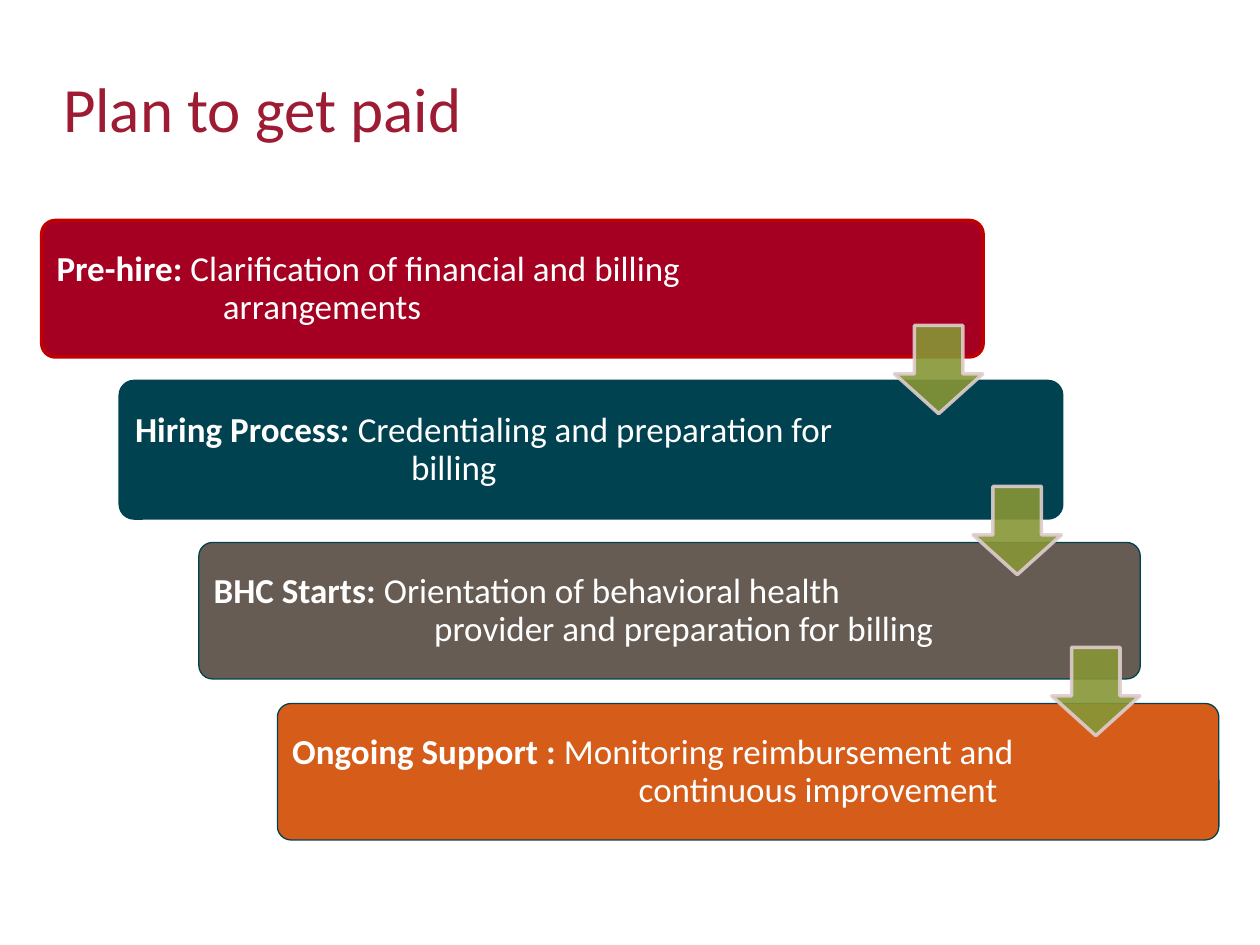
from dataclasses import dataclass

from lxml import etree
from pptx import Presentation
from pptx.dml.color import RGBColor
from pptx.enum.shapes import MSO_SHAPE
from pptx.enum.text import MSO_ANCHOR, PP_ALIGN
from pptx.oxml.ns import qn
from pptx.util import Pt

ROUND = MSO_SHAPE.ROUNDED_RECTANGLE
DOWN = MSO_SHAPE.DOWN_ARROW
MIDDLE = MSO_ANCHOR.MIDDLE
LEFT = PP_ALIGN.LEFT


@dataclass(frozen=True)
class Theme:
    """Fonts, type sizes and colours of the slide."""
    font: str = "Calibri"
    head: int = 36
    body: int = 20
    title: str = "9E1B34"
    text: str = "FFFFFF"
    red: str = "A50021"
    edge: str = "C00000"
    teal: str = "004250"
    brown: str = "675C53"
    orange: str = "D55C19"
    green: str = "879637"
    pink: str = "DFCDCE"


class Deck:
    """Draws styled elements on the current slide."""

    def __init__(self, theme):
        """Open a deck with one title slide."""
        self.theme = theme
        self.deck = Presentation()
        self.deck.slide_width, self.deck.slide_height = Pt(720), Pt(540)
        self.slide = self.deck.slides.add_slide(self.deck.slide_layouts[5])

    def style(self, para, size, color):
        """Set the font and alignment of a paragraph."""
        para.alignment = LEFT
        para.font.name = self.theme.font
        para.font.size = Pt(size)
        para.font.color.rgb = RGBColor.from_string(color)

    def frame(self, shape, inset):
        """Wrap and centre the text of a shape within even insets."""
        frame = shape.text_frame
        frame.word_wrap = True
        frame.vertical_anchor = MIDDLE
        frame.margin_left = frame.margin_right = Pt(inset)
        frame.margin_top = frame.margin_bottom = Pt(inset)
        return frame

    def title(self, text, left, top, width, height):
        """Fill and place the title."""
        shape = self.slide.shapes.title
        shape.left, shape.top = Pt(left), Pt(top)
        shape.width, shape.height = Pt(width), Pt(height)
        frame = self.frame(shape, 0)
        frame.text = text
        self.style(frame.paragraphs[0], self.theme.head, self.theme.title)

    def shape(self, kind, box, fill, line, weight, adjust):
        """Add a filled and outlined preset shape."""
        shape = self.slide.shapes.add_shape(kind, *map(Pt, box))
        shape.shadow.inherit = False
        shape.fill.solid()
        shape.fill.fore_color.rgb = RGBColor.from_string(fill)
        shape.line.color.rgb = RGBColor.from_string(line)
        shape.line.width = Pt(weight)
        for index, value in enumerate(adjust):
            shape.adjustments[index] = value
        return shape

    def bar(self, left, top, fill, line, weight):
        """Add the bar of one step."""
        self.shape(ROUND, (left, top, 538, 78), fill, line, weight, [0.1])

    def label(self, left, top, width, lead, text, hang):
        """Add a bold lead and its text with a hanging indent."""
        box = self.slide.shapes.add_textbox(*map(Pt, (left, top, width, 73.5)))
        para = self.frame(box, 6).paragraphs[0]
        props = para._p.get_or_add_pPr()
        props.set("marL", str(Pt(hang)))
        props.set("indent", str(-Pt(hang)))
        para.line_spacing = 0.9
        self.style(para, self.theme.body, self.theme.text)
        for part, bold in ((lead + " ", True), (text, False)):
            run = para.add_run()
            run.text = part
            run.font.bold = bold

    def arrow(self, left, top):
        """Add a slightly clear arrow to the next step."""
        shape = self.shape(DOWN, (left, top, 50.4, 50.4), self.theme.green,
                           self.theme.pink, 2, [0.55, 0.45])
        for color in shape.element.spPr.iter(qn("a:srgbClr")):
            etree.SubElement(color, qn("a:alpha")).set("val", "90000")


def main():
    """Build the stair of steps and save it."""
    theme = Theme()
    deck = Deck(theme)
    deck.title("Plan to get paid", 36, 32.4, 648, 57.6)
    steps = [
        ("Pre-hire:", "Clarification of financial and billing arrangements",
         95, 447, theme.red, theme.edge, 2),
        ("Hiring Process:", "Credentialing and preparation for billing",
         157.7, 437, theme.teal, theme.teal, 2),
        ("BHC Starts:",
         "Orientation of behavioral health provider and preparation for billing",
         126, 437, theme.brown, theme.teal, 0),
        ("Ongoing Support :",
         "Monitoring reimbursement and continuous improvement",
         198, 437, theme.orange, theme.teal, 0),
    ]
    left, top, right, down = 23.8, 126, 44.9, 92
    for index, (lead, text, hang, width, fill, line, weight) in enumerate(steps):
        across, below = left + index * right, top + index * down
        deck.bar(across, below, fill, line, weight)
        deck.label(across + 2.5, below + 2.3, width, lead, text, hang)
    for index in range(len(steps) - 1):
        deck.arrow(left + 487.4 + index * right, top + 60 + index * down)
    deck.deck.save("out.pptx")


if __name__ == "__main__":
    main()
